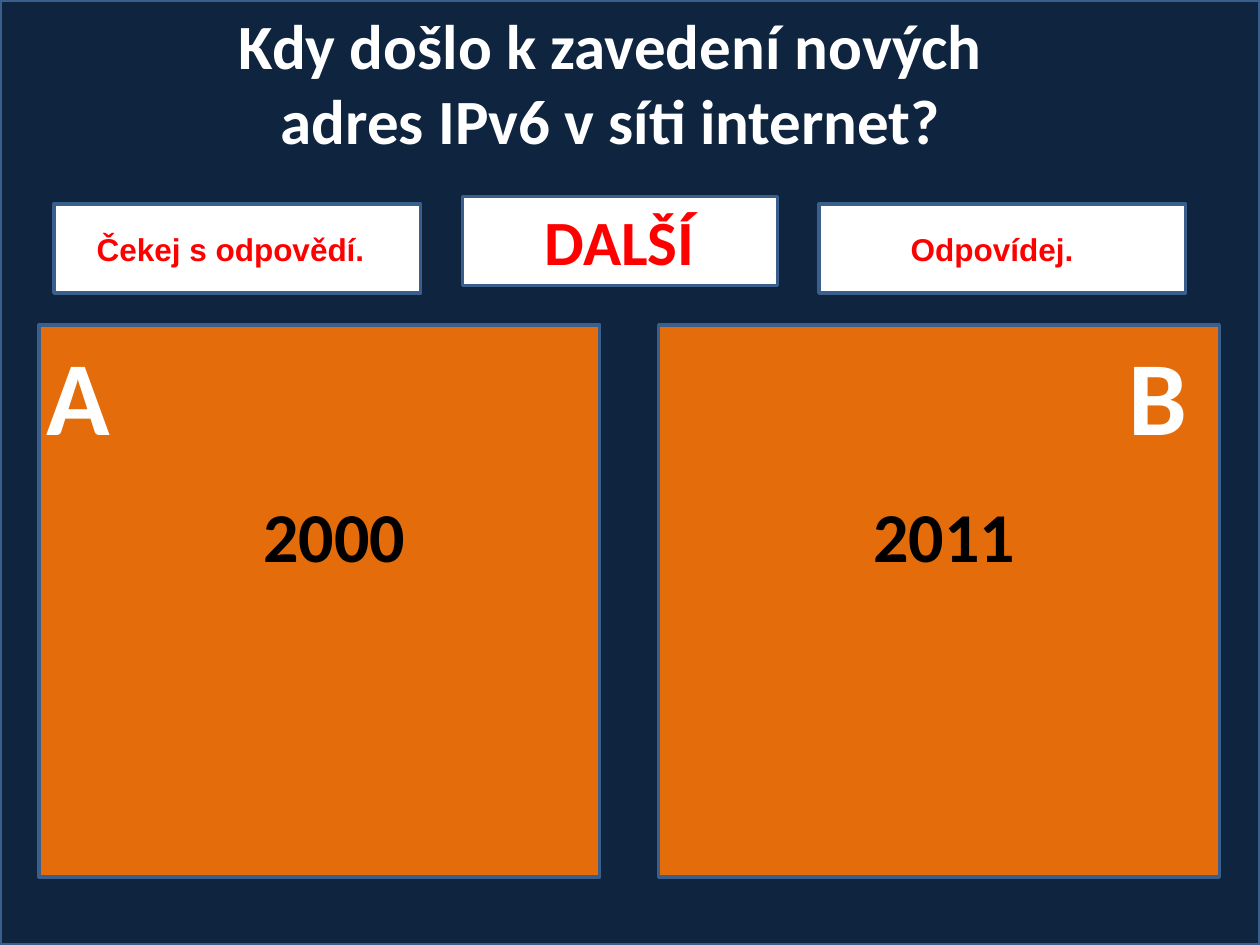
import dataclasses
import pptx
import pptx.dml.color
import pptx.enum.shapes
import pptx.enum.text
import pptx.util

Cm = pptx.util.Cm
Kind = pptx.enum.shapes.MSO_SHAPE
Align = pptx.enum.text.PP_ALIGN
Anchor = pptx.enum.text.MSO_ANCHOR
Fit = pptx.enum.text.MSO_AUTO_SIZE

HUES = {
    "navy": "0F243E",
    "orange": "E46C0A",
    "edge": "3A5F8C",
    "white": "FFFFFF",
    "black": "000000",
    "red": "FF0000",
}
STYLES = {
    "title": {"size": 36, "name": "Calibri", "hue": "white"},
    "year": {"size": 40, "name": "Calibri", "hue": "black"},
    "letter": {"size": 60, "name": "Calibri", "hue": "white"},
    "next": {"size": 36, "name": "Calibri", "hue": "red"},
    "label": {"size": 18, "name": "Arial", "hue": "red"},
}


@dataclasses.dataclass
class Area:
    left: float
    top: float
    width: float
    height: float

    def place(self) -> tuple:
        return tuple(Cm(n) for n in dataclasses.astuple(self))


@dataclasses.dataclass
class Panel:
    area: Area
    kind: int
    fill: str


@dataclasses.dataclass
class Label:
    area: Area
    text: str
    style: str
    align: int = Align.CENTER
    tight: bool = False


def color(hue: str) -> pptx.dml.color.RGBColor:
    return pptx.dml.color.RGBColor.from_string(HUES[hue])


def apply(item: object, values: dict) -> None:
    for key, value in values.items():
        setattr(item, key, value)


def draw_panel(slide: pptx.slide.Slide, panel: Panel) -> None:
    shape = slide.shapes.add_shape(panel.kind, *panel.area.place())
    shape.shadow.inherit = False
    shape.fill.solid()
    shape.fill.fore_color.rgb = color(panel.fill)
    shape.line.color.rgb = color("edge")
    shape.line.width = pptx.util.Pt(2)


def write(shape: pptx.shapes.base.BaseShape, label: Label) -> None:
    frame = shape.text_frame
    frame.text = label.text
    apply(frame, {
        "word_wrap": True,
        "auto_size": Fit.SHAPE_TO_FIT_TEXT,
        "vertical_anchor": Anchor.MIDDLE if label.tight else Anchor.TOP,
    })
    if label.tight:
        sides = ("left", "top", "right", "bottom")
        apply(frame, {f"margin_{side}": 0 for side in sides})
    style = STYLES[label.style]
    line = frame.paragraphs[0]
    line.alignment = label.align
    font = line.runs[0].font
    apply(font, {"size": pptx.util.Pt(style["size"]), "name": style["name"], "bold": True})
    font.color.rgb = color(style["hue"])


def draw_label(slide: pptx.slide.Slide, label: Label) -> None:
    write(slide.shapes.add_textbox(*label.area.place()), label)


def draw_title(slide: pptx.slide.Slide, label: Label) -> None:
    title = slide.shapes.title
    place = label.area.place()
    apply(title, dict(zip(("left", "top", "width", "height"), place)))
    write(title, label)
    title.element.getparent().append(title.element)


def main() -> None:
    deck = pptx.Presentation()
    apply(deck, {"slide_width": Cm(25.4), "slide_height": Cm(19.05)})
    slide = deck.slides.add_slide(deck.slide_layouts[5])

    draw_panel(slide, Panel(Area(0, 0, 25.4, 19.05), Kind.RECTANGLE, "navy"))
    draw_title(slide, Label(
        Area(3.38, 0, 17.86, 3.33),
        "Kdy došlo k zavedení nových adres IPv6 v síti internet?", "title"))

    answers = (
        ("A", "2000", 0.79, 2.18, 0.69),
        ("B", "2011", 13.28, 14.48, 22.5),
    )
    for letter, year, left, inner, mark in answers:
        draw_panel(slide, Panel(
            Area(left, 6.55, 11.3, 11.13), Kind.ACTION_BUTTON_CUSTOM, "orange"))
        draw_label(slide, Label(Area(inner, 9.93, 9.12, 1.7), year, "year", tight=True))
        draw_label(slide, Label(
            Area(mark, 6.53, 2.18, 2.82), letter, "letter", Align.LEFT))

    step = Area(9.32, 3.96, 6.35, 1.8)
    draw_panel(slide, Panel(step, Kind.FLOWCHART_PROCESS, "white"))
    draw_label(slide, Label(step, "DALŠÍ", "next"))

    cues = (
        ("Čekej s odpovědí.", 1.09, 1.7, 6.4),
        ("Odpovídej.", 16.51, 18.11, 5.41),
    )
    for text, left, inner, width in cues:
        draw_panel(slide, Panel(Area(left, 4.11, 7.39, 1.8), Kind.RECTANGLE, "white"))
        draw_label(slide, Label(Area(inner, 4.52, width, 1.02), text, "label", Align.LEFT))

    deck.save("out.pptx")


if __name__ == "__main__":
    main()
